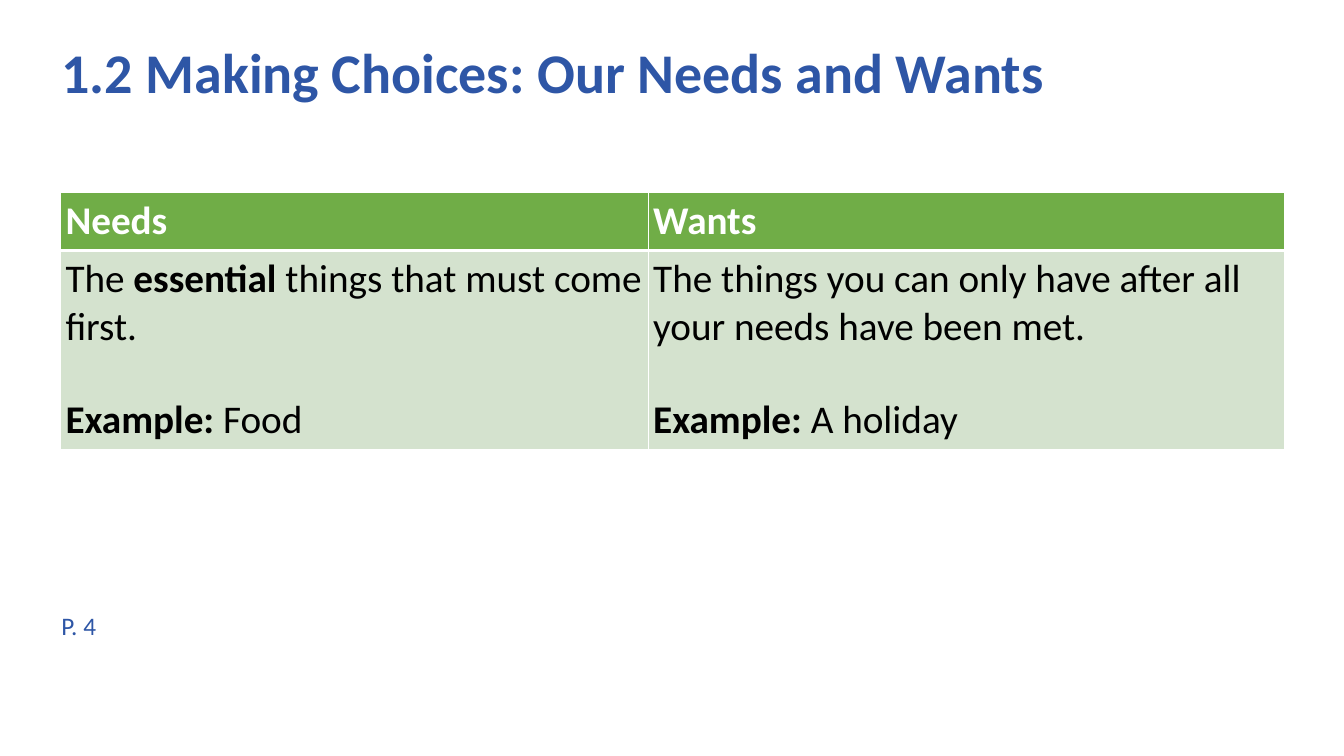
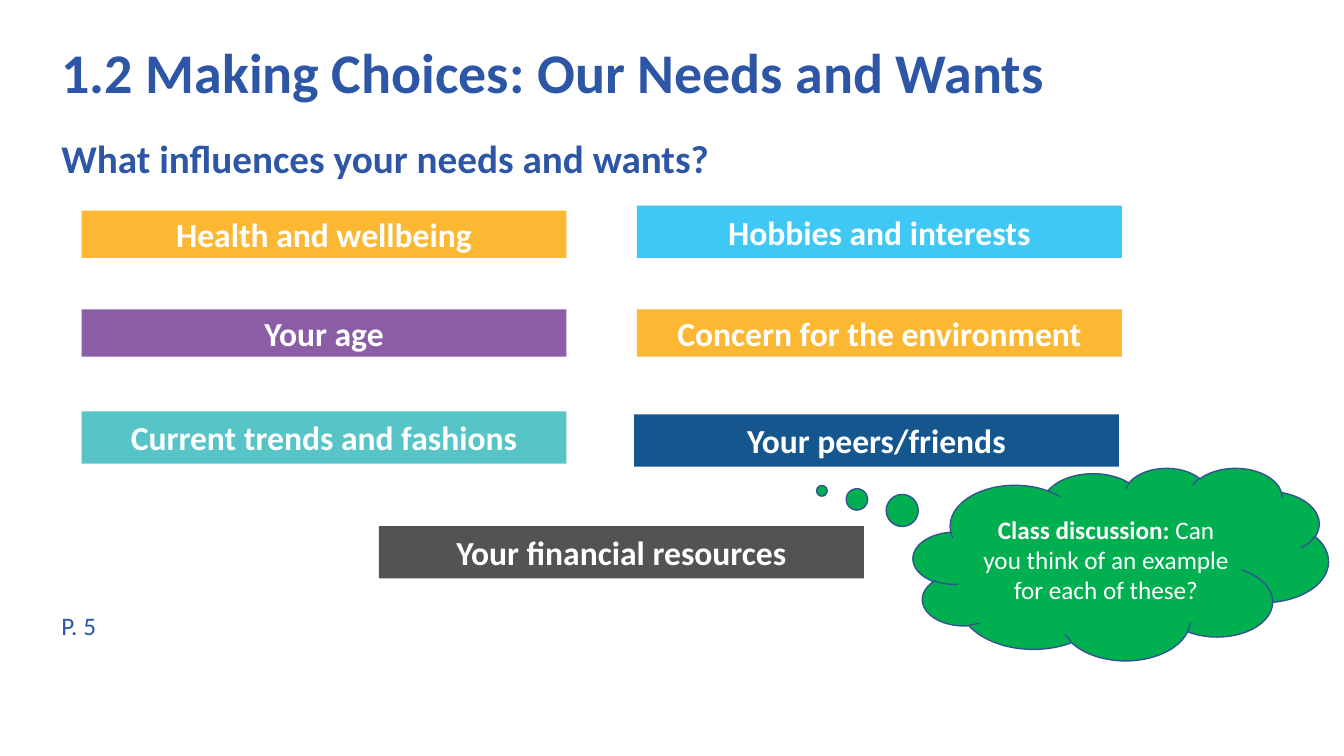
from dataclasses import dataclass

from lxml import etree
from pptx import Presentation
from pptx.dml.color import RGBColor
from pptx.enum.shapes import MSO_SHAPE
from pptx.enum.text import MSO_ANCHOR, MSO_AUTO_SIZE, PP_ALIGN
from pptx.oxml.ns import qn
from pptx.util import Pt

RECT = MSO_SHAPE.RECTANGLE
CLOUD = MSO_SHAPE.CLOUD_CALLOUT
TOP = MSO_ANCHOR.TOP
MIDDLE = MSO_ANCHOR.MIDDLE
LEFT = PP_ALIGN.LEFT
CENTER = PP_ALIGN.CENTER
FIXED = MSO_AUTO_SIZE.NONE

FONT = "Calibri"
BLUE = "2E56A6"
WHITE = "FFFFFF"
BLACK = "000000"
GREEN = "70AD47"
PALE = "D4E2CE"
AMBER = "FDB833"
CLOUD_FILL = "00B050"
CLOUD_EDGE = "32538F"

TITLE = "1.2 Making Choices: Our Needs and Wants"
MARGIN = 40.3
INSET = 3.6
BAR_WIDTH = 346.3
SLIM = 33.8
TALL = 37.4
COL_ONE = 58.3
COL_TWO = 455


@dataclass(frozen=True)
class Part:
    text: str
    bold: bool = False


@dataclass(frozen=True)
class Box:
    left: float
    top: float
    width: float
    height: float

    def points(self) -> tuple:
        return Pt(self.left), Pt(self.top), Pt(self.width), Pt(self.height)


@dataclass(frozen=True)
class Bar:
    text: str
    fill: str
    left: float
    top: float
    height: float


@dataclass(frozen=True)
class Column:
    head: str
    width: float
    meaning: tuple
    sample: str


COLUMNS = (
    Column("Needs", 419.8,
           (Part("The "), Part("essential ", True),
            Part("things that must come first.")), "Food"),
    Column("Wants", 454.3,
           (Part("The things you can only have after all your needs have been met."),),
           "A holiday"),
)

BARS = (
    Bar("Health and wellbeing", AMBER, COL_ONE, 150.5, SLIM),
    Bar("Your age", "8A5DA4", COL_ONE, 221, SLIM),
    Bar("Current trends and fashions", "57C5C7", COL_ONE, 293.8, TALL),
    Bar("Hobbies and interests", "40C8F4", COL_TWO, 146.9, TALL),
    Bar("Concern for the environment", AMBER, COL_TWO, 221, SLIM),
    Bar("Your peers/friends", "16568F", 452.9, 295.9, TALL),
    Bar("Your financial resources", "535353", 270.7, 375.8, TALL),
)


def hue(code: str) -> RGBColor:
    return RGBColor.from_string(code)


def write(para, parts: tuple, size: float, color: str, align=LEFT) -> None:
    para.text = parts[0].text
    for part in parts[1:]:
        para.add_run().text = part.text
    for run, part in zip(para.runs, parts):
        run.font.name = FONT
        run.font.size = Pt(size)
        run.font.bold = part.bold
        run.font.color.rgb = hue(color)
    para.alignment = align
    para.space_before = Pt(0)


def frame(shape, anchor=TOP):
    text = shape.text_frame
    text.word_wrap = True
    text.auto_size = FIXED
    text.vertical_anchor = anchor
    text.margin_left = text.margin_right = Pt(INSET)
    text.margin_top = text.margin_bottom = Pt(INSET)
    return text


def place(shape, box: Box) -> None:
    shape.left, shape.top, shape.width, shape.height = box.points()


def start(deck, layout: int, page: str):
    slide = deck.slides.add_slide(deck.slide_layouts[layout])
    title = slide.shapes.title
    place(title, Box(MARGIN, 28.8, 820.8, 47.5))
    para = frame(title).paragraphs[0]
    write(para, (Part(TITLE, True),), 40, BLUE)
    para.line_spacing = 0.9
    note = slide.shapes.add_textbox(*Box(MARGIN, 432.7, 473, 28.8).points())
    write(frame(note).paragraphs[0], (Part(page),), 18, BLUE)
    return slide


def draw(slide, kind, box: Box, fill: str):
    shape = slide.shapes.add_shape(kind, *box.points())
    shape.shadow.inherit = False
    shape.fill.solid()
    shape.fill.fore_color.rgb = hue(fill)
    shape.line.fill.background()
    return shape


def edge(cell, low: float) -> None:
    props = cell._tc.get_or_add_tcPr()
    for tag, width in (("a:lnL", 1), ("a:lnR", 1), ("a:lnT", 1), ("a:lnB", low)):
        line = etree.SubElement(props, qn(tag), w=str(Pt(width)))
        solid = etree.SubElement(line, qn("a:solidFill"))
        etree.SubElement(solid, qn("a:srgbClr"), val=WHITE)


def paint(cell, fill: str, low: float) -> None:
    edge(cell, low)
    cell.fill.solid()
    cell.fill.fore_color.rgb = hue(fill)
    cell.margin_left = cell.margin_right = Pt(INSET)
    cell.margin_top = cell.margin_bottom = Pt(INSET)


def compare(slide) -> None:
    width = sum(col.width for col in COLUMNS)
    box = Box(43.2, 137.5, width, 182)
    table = slide.shapes.add_table(2, len(COLUMNS), *box.points()).table
    table.horz_banding = False
    table.rows[0].height = Pt(41)
    table.rows[1].height = Pt(141)
    for index, col in enumerate(COLUMNS):
        table.columns[index].width = Pt(col.width)
        head, body = table.cell(0, index), table.cell(1, index)
        paint(head, GREEN, 3)
        paint(body, PALE, 1)
        write(head.text_frame.paragraphs[0], (Part(col.head, True),), 28, WHITE)
        write(body.text_frame.paragraphs[0], col.meaning, 28, BLACK)
        para = body.text_frame.add_paragraph()
        write(para, (Part("Example: ", True), Part(col.sample)), 28, BLACK)
        para.space_before = Pt(32)


def ask(slide) -> None:
    body = slide.placeholders[1]
    place(body, Box(MARGIN, 92.2, 573, 35.3))
    para = frame(body).paragraphs[0]
    props = para._p.get_or_add_pPr()
    props.set("marL", "0")
    props.set("indent", "0")
    etree.SubElement(props, qn("a:buNone"))
    write(para, (Part("What influences your needs and wants?", True),), 28, BLUE)


def stack(slide) -> None:
    for bar in BARS:
        box = Box(bar.left, bar.top, BAR_WIDTH, bar.height)
        shape = draw(slide, RECT, box, bar.fill)
        write(frame(shape, MIDDLE).paragraphs[0], (Part(bar.text, True),),
              24, WHITE, CENTER)


def discuss(slide) -> None:
    cloud = draw(slide, CLOUD, Box(652.3, 334.1, 296.6, 137.5), CLOUD_FILL)
    cloud.adjustments[0] = -0.72
    cloud.adjustments[1] = -0.38
    cloud.line.color.rgb = hue(CLOUD_EDGE)
    cloud.line.width = Pt(1)
    text = frame(cloud, MIDDLE)
    text.margin_left = text.margin_right = Pt(2 * INSET)
    parts = (Part("Class discussion: ", True),
             Part("Can you think of an example for each of these?"))
    write(text.paragraphs[0], parts, 18, WHITE, CENTER)


def main() -> None:
    deck = Presentation()
    deck.slide_width, deck.slide_height = Pt(960), Pt(540)
    compare(start(deck, 5, "P. 4"))
    slide = start(deck, 1, "P. 5")
    ask(slide)
    stack(slide)
    discuss(slide)
    deck.save("out.pptx")


if __name__ == "__main__":
    main()
